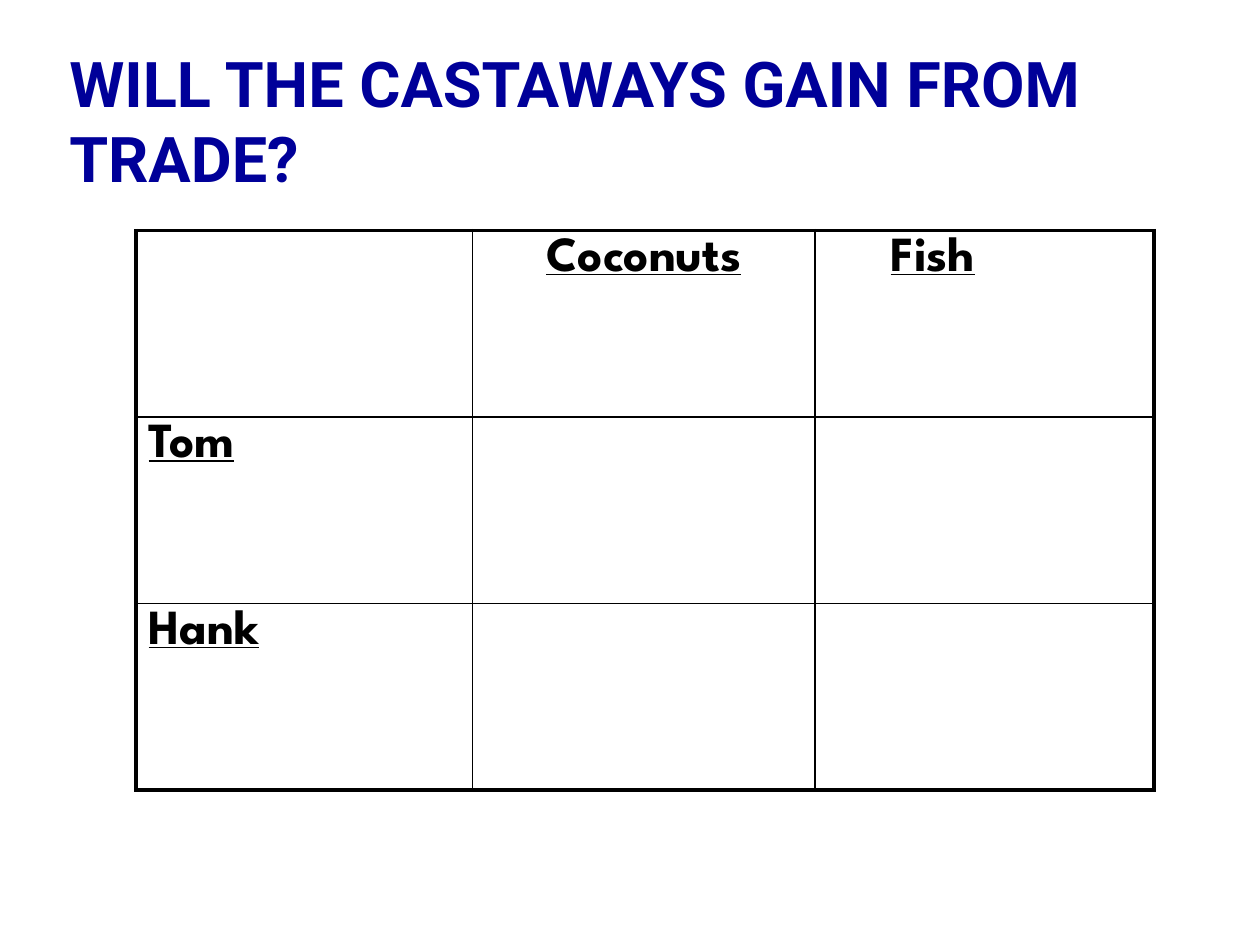
import pptx
import pptx.dml.color
import pptx.enum.text
import pptx.oxml.ns
import pptx.util
from lxml import etree
from pptx.util import Inches

ROWS = [["", "Coconuts", "Fish"], ["Tom", "", ""], ["Hank", "", ""]]
COL_WIDTHS = [2.67, 2.72, 2.69]
OUTER, INNER = 2.25, 1


def color(hex_str):
    return pptx.dml.color.RGBColor.from_string(hex_str)


def add_run(p, text, font, size, hex_str, underline=False):
    r = p.add_run()
    r.text = text
    r.font.name = font
    r.font.size = pptx.util.Pt(size)
    r.font.bold = True
    r.font.underline = underline
    r.font.color.rgb = color(hex_str)


def add_border(cell, side, width, hex_str):
    qn = pptx.oxml.ns.qn
    tcPr = cell._tc.get_or_add_tcPr()
    ln = etree.SubElement(tcPr, qn("a:ln" + side), w=str(pptx.util.Pt(width)))
    fill = etree.SubElement(ln, qn("a:solidFill"))
    etree.SubElement(fill, qn("a:srgbClr"), val=hex_str)


def add_title(s, left, top, width, height):
    sp = s.shapes.title
    sp.left, sp.top, sp.width, sp.height = left, top, width, height
    tf = sp.text_frame
    tf.word_wrap = True
    tf.auto_size = pptx.enum.text.MSO_AUTO_SIZE.NONE
    tf.vertical_anchor = pptx.enum.text.MSO_ANCHOR.BOTTOM
    tf.margin_left = tf.margin_right = Inches(0.05)
    tf.margin_top = tf.margin_bottom = 0
    p = tf.paragraphs[0]
    p.alignment = pptx.enum.text.PP_ALIGN.LEFT
    add_run(p, "WILL THE CASTAWAYS GAIN FROM TRADE?", "Roboto", 36, "000099")


def add_trade_table(s, left, top, width, height):
    n_rows, n_cols = len(ROWS), len(COL_WIDTHS)
    table = s.shapes.add_table(n_rows, n_cols, left, top, width, height).table
    table.first_row = table.horz_banding = False
    for col, col_width in zip(table.columns, COL_WIDTHS):
        col.width = Inches(col_width)
    for i, row in enumerate(ROWS):
        for j, text in enumerate(row):
            cell = table.cell(i, j)
            on_edge = {"L": j == 0, "R": j == n_cols - 1,
                       "T": i == 0, "B": i == n_rows - 1}
            for side, outer in on_edge.items():
                add_border(cell, side, OUTER if outer else INNER, "000000")
            cell.fill.background()
            if text:
                add_run(cell.text_frame.paragraphs[0], text,
                        "League Spartan", 28, "000000", underline=True)
    coconuts = table.cell(0, 1).text_frame.paragraphs[0]
    coconuts.alignment = pptx.enum.text.PP_ALIGN.CENTER
    fish = table.cell(0, 2).text_frame.paragraphs[0]
    fish._p.get_or_add_pPr().set("marL", str(Inches(0.5)))


def main():
    prs = pptx.Presentation()
    prs.slide_width, prs.slide_height = Inches(10), Inches(7.5)
    s = prs.slides.add_slide(prs.slide_layouts[5])
    s.background.fill.solid()
    s.background.fill.fore_color.rgb = color("FFFFFF")
    add_title(s, Inches(0.5), Inches(0.3), Inches(9), Inches(1.25))
    add_trade_table(s, Inches(1.08), Inches(1.83), Inches(8.08), Inches(4.44))
    prs.save("out.pptx")


if __name__ == "__main__":
    main()
